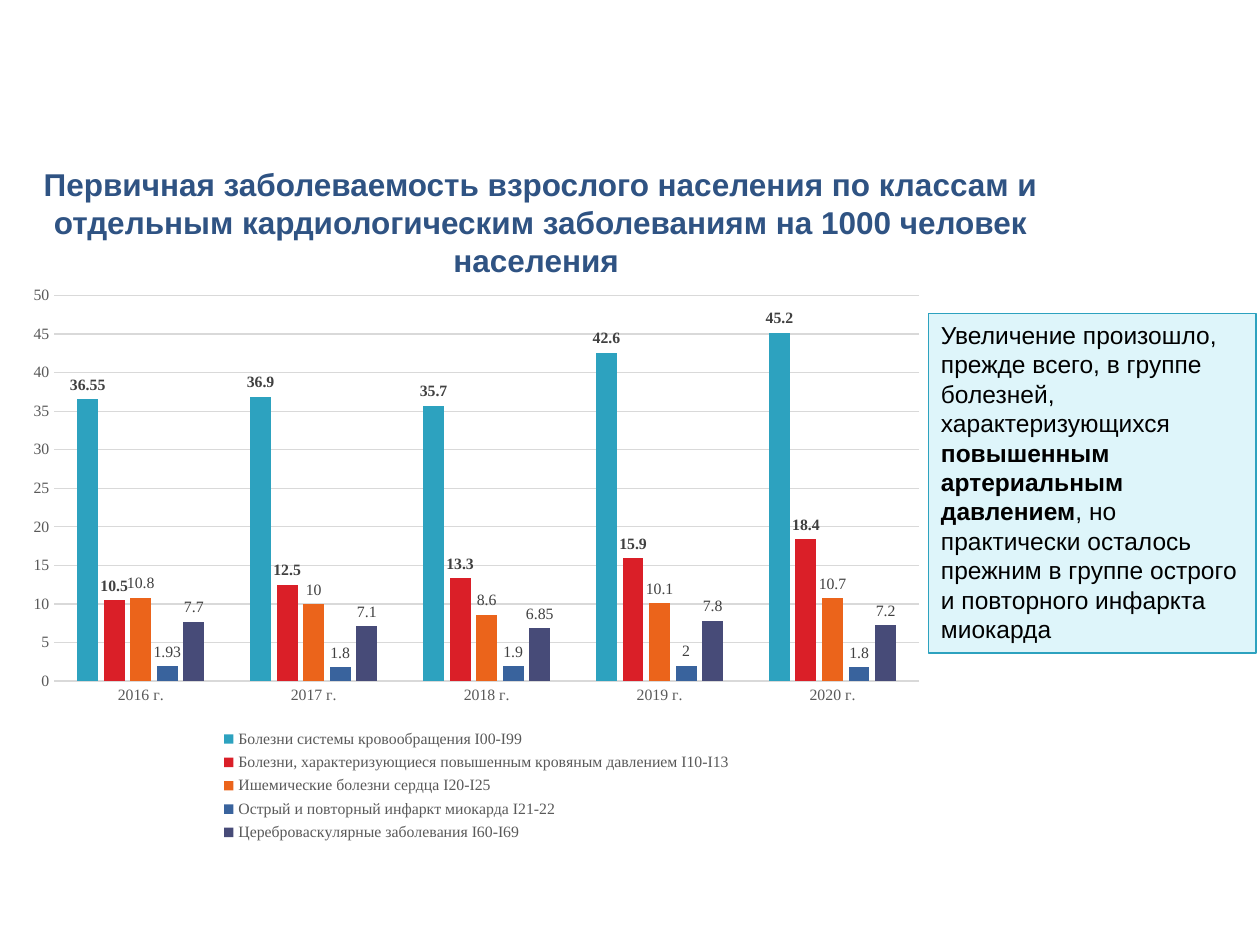
import pptx
import pptx.chart.data
import pptx.dml.color
import pptx.enum.chart
import pptx.enum.shapes
import pptx.enum.text
import pptx.util

WIDTH, HEIGHT = 10, 7.5
SANS, SERIF = "Arial", "Times New Roman"
GRID_GREY, AXIS_GREY, LABEL_GREY = "D9D9D9", "595959", "404040"
TEAL, PALE_TEAL, NAVY, BLACK = "2DA2BF", "DEF5FA", "2F5383", "000000"

HEADING = ("Первичная заболеваемость взрослого населения по классам и отдельным "
           "кардиологическим заболеваниям на 1000 человек населения ")
COMMENT = [
    ("Увеличение произошло, прежде всего, в группе болезней, характеризующихся ", False),
    ("повышенным артериальным давлением", True),
    (", но практически осталось прежним в группе острого и повторного инфаркта миокарда", False),
]
YEARS = [f"{year} г." for year in range(2016, 2021)]
# name, values, colour, bold labels
DISEASES = [
    ("Болезни системы кровообращения I00-I99",
     (36.55, 36.9, 35.7, 42.6, 45.2), TEAL, True),
    ("Болезни, характеризующиеся повышенным кровяным давлением I10-I13",
     (10.5, 12.5, 13.3, 15.9, 18.4), "DA1F28", True),
    ("Ишемические болезни сердца I20-I25",
     (10.8, 10, 8.6, 10.1, 10.7), "EB641B", False),
    ("Острый и повторный инфаркт миокарда I21-22",
     (1.93, 1.8, 1.9, 2, 1.8), "39639D", False),
    ("Цереброваскулярные заболевания I60-I69",
     (7.7, 7.1, 6.85, 7.8, 7.2), "474B78", False),
]


def rgb(hex_code):
    return pptx.dml.color.RGBColor.from_string(hex_code)


def area(left, top, width, height):
    """Turn shares of the slide's size into lengths."""
    return [pptx.util.Inches(share * side) for share, side in
            zip((left, top, width, height), (WIDTH, HEIGHT) * 2)]


def apply(target, formats):
    for attribute, value in formats.items():
        setattr(target, attribute, value)


def set_font(font, name, size, colour, bold=False):
    apply(font, {"name": name, "size": pptx.util.Pt(size), "bold": bold})
    font.color.rgb = rgb(colour)


def set_line(line, colour, width=0.75):
    line.color.rgb = rgb(colour)
    line.width = pptx.util.Pt(width)


def add_heading(slide):
    frame = slide.shapes.add_textbox(*area(-0.028, 0.196, 0.914, 0.077)).text_frame
    apply(frame, {"word_wrap": True,
                  "vertical_anchor": pptx.enum.text.MSO_ANCHOR.MIDDLE})
    paragraph = frame.paragraphs[0]
    paragraph.alignment = pptx.enum.text.PP_ALIGN.CENTER
    run = paragraph.add_run()
    run.text = HEADING
    set_font(run.font, SANS, 18, NAVY, bold=True)


def format_axes(chart):
    for axis in (chart.category_axis, chart.value_axis):
        apply(axis, {"major_tick_mark": pptx.enum.chart.XL_TICK_MARK.NONE,
                     "minor_tick_mark": pptx.enum.chart.XL_TICK_MARK.NONE})
        set_font(axis.tick_labels.font, SERIF, 9, AXIS_GREY)
    set_line(chart.category_axis.format.line, GRID_GREY)
    apply(chart.value_axis, {"minimum_scale": 0, "maximum_scale": 50, "major_unit": 5})
    chart.value_axis.format.line.fill.background()
    set_line(chart.value_axis.major_gridlines.format.line, GRID_GREY)


def format_series(series, colour, bold):
    series.format.fill.solid()
    series.format.fill.fore_color.rgb = rgb(colour)
    series.invert_if_negative = False
    labels = series.data_labels
    apply(labels, {"show_value": True,
                   "position": pptx.enum.chart.XL_LABEL_POSITION.OUTSIDE_END})
    set_font(labels.font, SERIF, 9, LABEL_GREY, bold)


def add_incidence_chart(slide):
    incidence = pptx.chart.data.CategoryChartData()
    incidence.categories = YEARS
    for name, values, _, _ in DISEASES:
        incidence.add_series(name, values)
    chart = slide.shapes.add_chart(
        pptx.enum.chart.XL_CHART_TYPE.COLUMN_CLUSTERED,
        *area(0.012, 0.291, 0.732, 0.605), incidence).chart
    apply(chart, {"has_title": False, "has_legend": True})
    set_font(chart.font, SERIF, 10, BLACK)
    apply(chart.legend, {"position": pptx.enum.chart.XL_LEGEND_POSITION.BOTTOM,
                         "include_in_layout": False})
    set_font(chart.legend.font, SERIF, 9, AXIS_GREY)
    format_axes(chart)
    columns = chart.plots[0]
    apply(columns, {"gap_width": 219, "overlap": -27, "vary_by_categories": False})
    for series, (_, _, colour, bold) in zip(columns.series, DISEASES):
        format_series(series, colour, bold)


def add_comment(slide):
    panel = slide.shapes.add_shape(pptx.enum.shapes.MSO_SHAPE.RECTANGLE,
                                   *area(0.737, 0.332, 0.26, 0.359))
    panel.shadow.inherit = False
    panel.fill.solid()
    panel.fill.fore_color.rgb = rgb(PALE_TEAL)
    set_line(panel.line, TEAL)
    frame = panel.text_frame
    apply(frame, {"word_wrap": True,
                  "auto_size": pptx.enum.text.MSO_AUTO_SIZE.SHAPE_TO_FIT_TEXT,
                  "vertical_anchor": pptx.enum.text.MSO_ANCHOR.TOP})
    paragraph = frame.paragraphs[0]
    paragraph.alignment = pptx.enum.text.PP_ALIGN.LEFT
    for words, bold in COMMENT:
        run = paragraph.add_run()
        run.text = words
        set_font(run.font, SANS, 14, BLACK, bold)


def main():
    deck = pptx.Presentation()
    apply(deck, {"slide_width": pptx.util.Inches(WIDTH),
                 "slide_height": pptx.util.Inches(HEIGHT)})
    slide = deck.slides.add_slide(deck.slide_layouts[6])
    add_heading(slide)
    add_incidence_chart(slide)
    add_comment(slide)
    deck.save("out.pptx")


if __name__ == "__main__":
    main()
